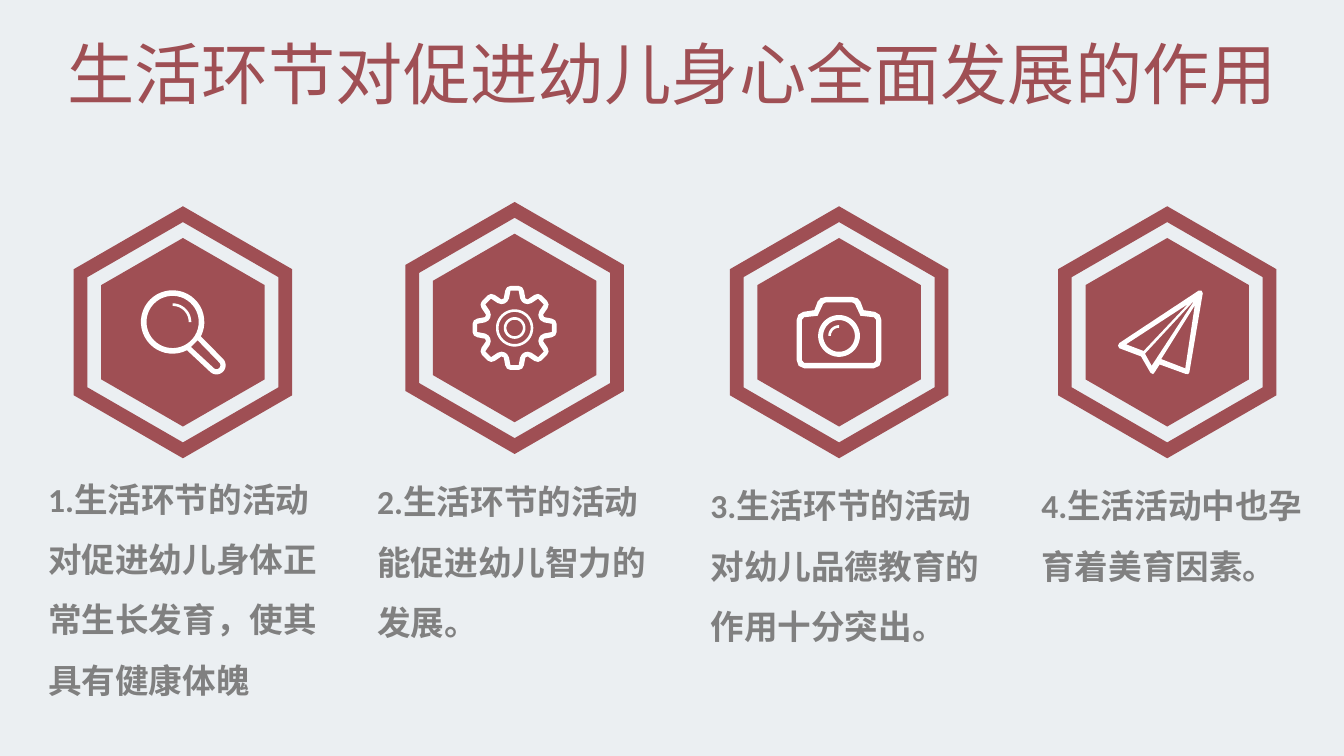
"""Build a slide with four hexagon icons, each above a numbered point."""
from math import cos, radians, sin

from lxml.etree import SubElement
from pptx import Presentation
from pptx.dml.color import RGBColor
from pptx.enum.text import MSO_ANCHOR, MSO_AUTO_SIZE, PP_ALIGN
from pptx.oxml.ns import qn
from pptx.util import Pt

COLORS = {"back": "EBEFF2", "red": "9F4F54", "white": "FFFFFF", "gray": "808080"}
CJK = "Noto Sans CJK SC"
TITLE = "生活环节对促进幼儿身心全面发展的作用"


def color(name):
    """Return a named colour."""
    return RGBColor.from_string(COLORS[name])


def arc(x, y, size, start=0, end=360):
    """Return points on an arc, with angles clockwise from the right."""
    count = max(8, int(abs(end - start) / 8))
    turns = [radians(start + (end - start) * i / count) for i in range(count + 1)]
    return [(x + size * cos(t), y + size * sin(t)) for t in turns]


def ring(x, y, outer, inner):
    """Return the two contours of a ring."""
    return [arc(x, y, outer), arc(x, y, inner)]


def band(x, y, outer, inner, start, end):
    """Return the contour of a curved band."""
    return [arc(x, y, outer, start, end) + arc(x, y, inner, end, start)]


def mirror(half):
    """Close a right half with its mirror on the left."""
    return half + [(-x, y) for x, y in reversed(half)]


def hexagon(size):
    """Return an upright hexagon."""
    wide = size * 0.867
    return mirror([(0, -size), (wide, -size / 2), (wide, size / 2), (0, size)])


def cog(tooth):
    """Repeat a tooth eight times around the centre."""
    points = []
    for step in range(8):
        c, s = cos(radians(45 * step)), sin(radians(45 * step))
        points += [(x * c - y * s, x * s + y * c) for x, y in tooth]
    return points


def lens():
    """Return the parts of a magnifier."""
    rim = arc(-5.5, -5.5, 17, 63, 387) + arc(18, 17.7, 4.9, -45, 135)
    grip = [(7.9, 4.3)] + arc(18, 17.7, 2.1, -45, 135) + [(4.3, 7.9)]
    return [[rim, arc(-5.5, -5.5, 14), grip], band(-5.5, -5.5, 10, 8.6, -90, 0)]


def gear():
    """Return the parts of a gear."""
    outer = [(5.8, -15.8), (5, -20), (4, -21.8), (2.2, -22.5)]
    inner = [(5.2, -13.2), (4, -14), (3, -15.8), (2.2, -20)]
    rim = [cog(list(reversed(mirror(half)))) for half in (outer, inner)]
    return [rim, ring(0, 0, 10, 8.6), ring(0, 0, 5.8, 4.4)]


def camera():
    """Return the parts of a camera."""
    outer = [(7, -18.9), (9.8, -18.2), (11.4, -16.5), (13.2, -11.8), (19.2, -10.9),
             (21.8, -9.3), (22.7, -6.6), (22.7, 15), (21.6, 18), (18.7, 19.3)]
    inner = [(7, -16), (8.5, -15.2), (11.5, -8.8), (18.7, -8), (19.9, -6.6),
             (19.9, 15), (18.7, 16.4)]
    return [ring(0, 2, 11.2, 8.5), band(0, 2, 5.8, 4.4, 180, 270),
            [mirror(outer), mirror(inner)]]


def plane():
    """Return the single part of a paper plane."""
    edge = [(18.4, -22.3), (16.9, -22.3), (-25.6, 5.8), (-26.3, 7.2), (-25.6, 8.6),
            (-14, 13), (-9, 21.6), (-7.6, 22.5), (-6.8, 21.6), (-4, 17.3),
            (9.7, 22.3), (11.2, 22.5), (11.9, 21.6), (19.1, -20.9)]
    folds = [[(9.7, 19.4), (-3.2, 14.4), (14.8, -14.4)],
             [(-11.9, 11.5), (14.8, -17.3), (-8.3, 18)],
             [(-22, 6.5), (11.2, -15.1), (-12.6, 10.1)]]
    return [[edge] + folds]


def draw(shapes, part, x, y, fill):
    """Draw contours as one filled shape around a centre."""
    paths = [[(Pt(x + a), Pt(y + b)) for a, b in path] for path in part]
    pen = shapes.build_freeform(*paths[0][0], scale=1.0)
    for index, path in enumerate(paths):
        if index:
            pen.move_to(*path[0])
        pen.add_line_segments(path[1:], close=True)
    shape = pen.convert_to_shape()
    shape.shadow.inherit = False
    shape.fill.solid()
    shape.fill.fore_color.rgb = color(fill)
    shape.line.fill.background()


def style(para, face, size, name, bold):
    """Format the runs of a paragraph."""
    for run in para.runs:
        font = run.font
        font.name, font.size, font.bold = face, Pt(size), bold
        font.color.rgb = color(name)
        SubElement(run._r.get_or_add_rPr(), qn("a:ea")).set("typeface", CJK)


def head(slide):
    """Fill and place the title."""
    title = slide.shapes.title
    title.left, title.top, title.width, title.height = Pt(24.5), Pt(13.7), Pt(671), Pt(51)
    frame = title.text_frame
    frame.text = TITLE
    frame.word_wrap = False
    frame.auto_size = MSO_AUTO_SIZE.SHAPE_TO_FIT_TEXT
    frame.vertical_anchor = MSO_ANCHOR.TOP
    para = frame.paragraphs[0]
    para.alignment = PP_ALIGN.CENTER
    style(para, CJK, 36, "red", False)


def note(shapes, text, box):
    """Add the text under an icon."""
    frame = shapes.add_textbox(*[Pt(n) for n in box]).text_frame
    frame.text = text
    frame.word_wrap = True
    frame.auto_size = MSO_AUTO_SIZE.SHAPE_TO_FIT_TEXT
    para = frame.paragraphs[0]
    para.line_spacing = 1.5
    style(para, "Calibri", 18, "gray", True)


def item(slide, x, y, icon, text, box):
    """Group a hexagon, its icon and its text."""
    shapes = slide.shapes.add_group_shape().shapes
    draw(shapes, [hexagon(67.5), hexagon(59)], x, y, "red")
    draw(shapes, [hexagon(50.5)], x, y, "red")
    for part in icon:
        draw(shapes, part, x, y, "white")
    note(shapes, text, box)


def main():
    """Build and save the slide."""
    deck = Presentation()
    deck.slide_width, deck.slide_height = Pt(720), Pt(405)
    slide = deck.slides.add_slide(deck.slide_layouts[5])
    slide.background.fill.solid()
    slide.background.fill.fore_color.rgb = color("back")
    head(slide)
    items = [
        (98, 178, lens(), "1.生活环节的活动对促进幼儿身体正常生长发育，使其具有健康体魄",
         (18.7, 242, 164, 138)),
        (275.7, 175.7, gear(), "2.生活环节的活动能促进幼儿智力的发展。",
         (195, 243.4, 162, 105)),
        (449.5, 178, camera(), "3.生活环节的活动对幼儿品德教育的作用十分突出。",
         (373.5, 245.5, 168, 105)),
        (625.3, 178, plane(), "4.生活活动中也孕育着美育因素。",
         (550.8, 245.5, 158.4, 69)),
    ]
    for entry in items:
        item(slide, *entry)
    deck.save("out.pptx")


if __name__ == "__main__":
    main()
